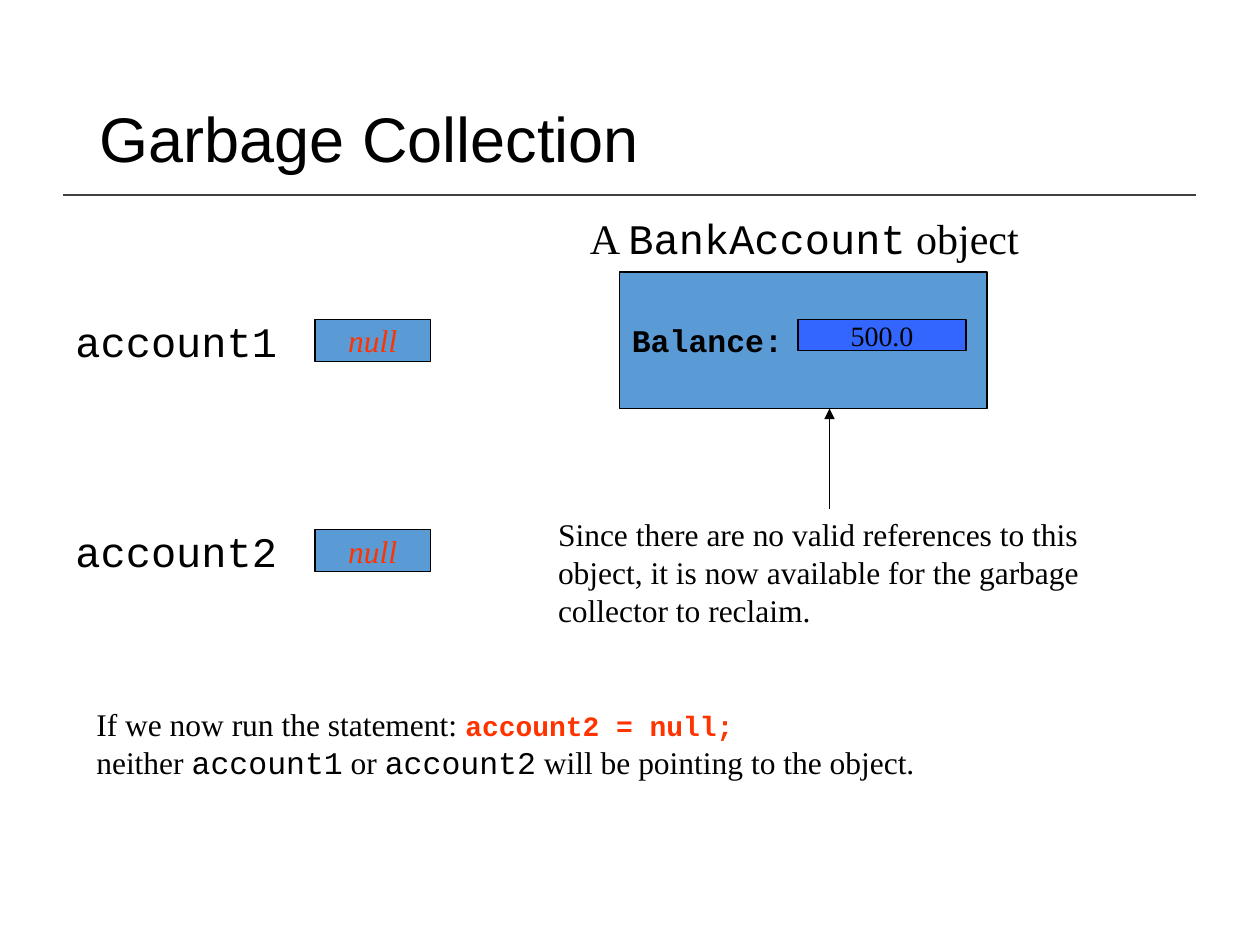
from lxml.etree import SubElement
from pptx import Presentation
from pptx.dml.color import RGBColor
from pptx.enum.shapes import MSO_CONNECTOR, MSO_SHAPE
from pptx.enum.text import MSO_ANCHOR, PP_ALIGN
from pptx.oxml.ns import qn
from pptx.util import Pt

SERIF = "Times New Roman"
MONO = "Courier New"
BLACK = "000000"
RED = "FF3300"
BLUE = "5B9BD5"
DEEP_BLUE = "3366FF"


def color(value):
    return RGBColor.from_string(value)


def points(*lengths):
    return [Pt(length) for length in lengths]


def add_span(para, text, font=SERIF, size=18, ink=BLACK, bold=False, italic=False):
    span = para.add_run()
    span.text = text
    span.font.name = font
    span.font.size = Pt(size)
    span.font.bold = bold
    span.font.italic = italic
    span.font.color.rgb = color(ink)


def add_title(page, text):
    title = page.shapes.title
    title.left, title.top, title.width, title.height = points(49.7, 28.8, 620.6, 104.4)
    title.text_frame.vertical_anchor = MSO_ANCHOR.MIDDLE
    para = title.text_frame.paragraphs[0]
    para.alignment = PP_ALIGN.LEFT
    para.line_spacing = 0.9
    add_span(para, text, "Arial", 36)


def add_text(page, place, lines, wrap=True):
    """Add a text box; each line is a list of (text, span format) pairs."""
    box = page.shapes.add_textbox(*points(*place))
    box.text_frame.word_wrap = wrap
    for number, line in enumerate(lines):
        para = box.text_frame.add_paragraph() if number else box.text_frame.paragraphs[0]
        for text, style in line:
            add_span(para, text, **style)


def add_box(page, place, fill, text, align=PP_ALIGN.CENTER, **style):
    box = page.shapes.add_shape(MSO_SHAPE.RECTANGLE, *points(*place))
    box.shadow.inherit = False
    box.fill.solid()
    box.fill.fore_color.rgb = color(fill)
    box.line.color.rgb = color(BLACK)
    box.line.width = Pt(0.75)
    box.text_frame.word_wrap = True
    box.text_frame.vertical_anchor = MSO_ANCHOR.MIDDLE
    para = box.text_frame.paragraphs[0]
    para.alignment = align
    add_span(para, text, **style)


def add_line(page, ends, ink, width, arrow=False):
    line = page.shapes.add_connector(MSO_CONNECTOR.STRAIGHT, *points(*ends))
    line.line.color.rgb = color(ink)
    line.line.width = Pt(width)
    if arrow:
        SubElement(line.line._get_or_add_ln(), qn("a:tailEnd"), type="triangle")
    SubElement(line._element.spPr, qn("a:effectLst"))


def add_variable(page, name, top):
    """Add a variable name and the box with its null reference."""
    add_text(page, (36, top, 132, 36), [[(name, {"font": MONO, "size": 24})]])
    add_box(page, (180, top + 6, 66, 24), BLUE, "null", ink=RED, italic=True)


def add_account_object(page):
    large = {"size": 24}
    heading = [("A ", large), ("BankAccount", {"font": MONO, "size": 24}), (" object", large)]
    add_text(page, (330, 118, 260.6, 36), [heading], wrap=False)
    add_box(page, (354, 155.5, 210, 78), BLUE, "Balance:", PP_ALIGN.LEFT, font=MONO, bold=True)
    add_box(page, (456, 182.5, 96, 18), DEEP_BLUE, "500.0", size=16)


def add_explanation(page):
    lines = (
        "Since there are no valid references to this",
        "object, it is now available for the garbage",
        "collector to reclaim.",
    )
    add_text(page, (311.8, 291, 324, 72), [[(line, {})] for line in lines])
    add_line(page, (474, 291, 474, 233.5), BLACK, 0.75, arrow=True)


def add_statement(page):
    code = {"font": MONO}
    command = {"font": MONO, "size": 16, "ink": RED, "bold": True}
    lines = [
        [("If we now run the statement: ", {}), ("account2 = null;", command)],
        [
            ("neither ", {}),
            ("account1", code),
            (" or ", {}),
            ("account2", code),
            (" will be pointing to the object.", {}),
        ],
    ]
    add_text(page, (48, 399.6, 482.4, 50.4), lines, wrap=False)


def main():
    deck = Presentation()
    deck.slide_width, deck.slide_height = points(720, 540)
    page = deck.slides.add_slide(deck.slide_layouts[5])
    add_line(page, (36, 111.6, 683.3, 111.6), "404040", 1)
    add_title(page, "Garbage Collection")
    add_statement(page)
    add_explanation(page)
    add_account_object(page)
    add_variable(page, "account1", 176.5)
    add_variable(page, "account2", 296.5)
    deck.save("out.pptx")


if __name__ == "__main__":
    main()
